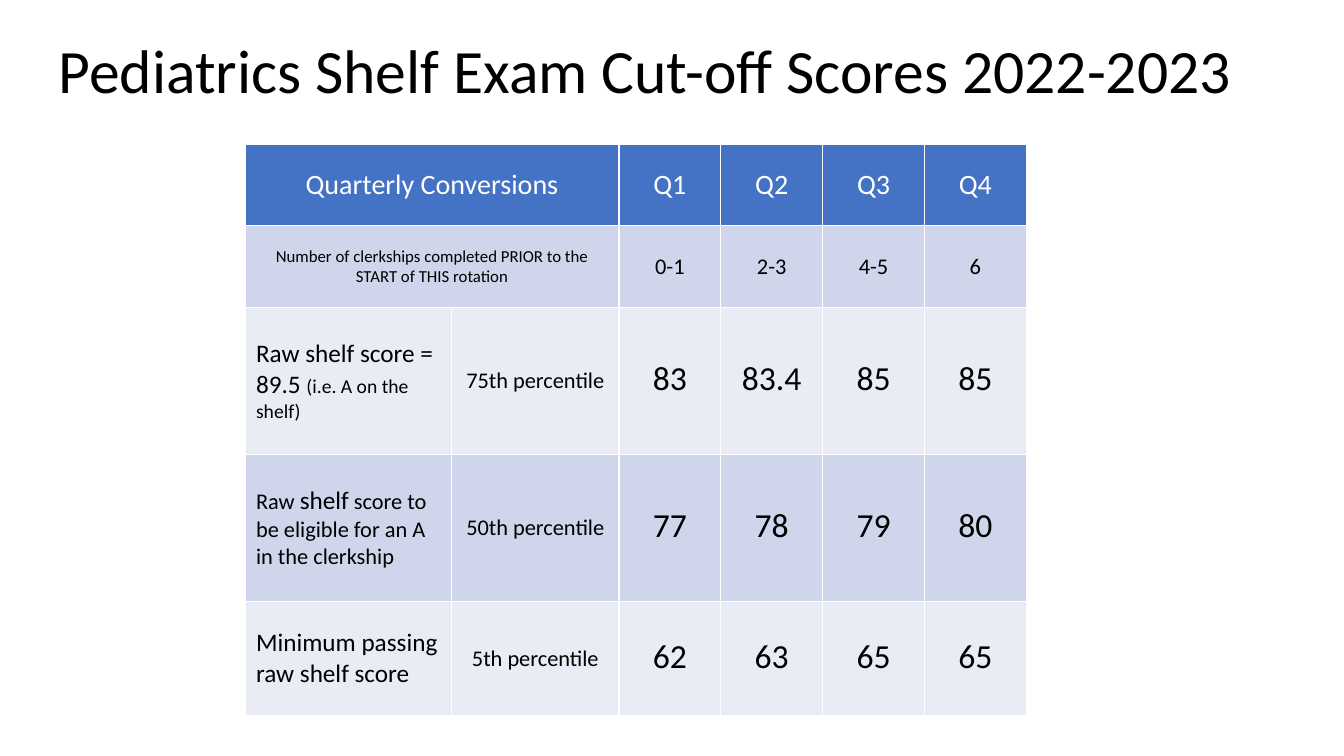
from lxml.etree import SubElement
from pptx import Presentation
from pptx.dml.color import RGBColor
from pptx.enum.text import MSO_ANCHOR, PP_ALIGN
from pptx.oxml.ns import qn
from pptx.util import Inches, Pt

FONT = "Calibri"
BLACK, WHITE = "000000", "FFFFFF"
HEADER, BAND_DARK, BAND_LIGHT = "4472C4", "CFD5EA", "E9EBF5"
COLS = [2.05, 1.66] + [1.01] * 4
ROWS = [0.81, 0.81, 1.46, 1.46, 1.13]
TEXT_INSETS = (0.11, 0.06, 0.11, 0.06)
SCORE_INSETS = (0.01, 0.01, 0.01, 0.05)

HEADINGS = [
    ("Quarterly Conversions", 20, ["Q1", "Q2", "Q3", "Q4"], 20),
    ("Number of clerkships completed PRIOR to the START of THIS rotation", 12,
     ["0-1", "2-3", "4-5", "6"], 16),
]
SCORES = [
    ([("Raw shelf score = 89.5 ", 18), ("(i.e. A on the shelf)", 14)],
     "75th percentile", ["83", "83.4", "85", "85"]),
    ([("Raw ", 16), ("shelf", 18),
      (" score to be eligible for an A in the clerkship", 16)],
     "50th percentile", ["77", "78", "79", "80"]),
    ([("Minimum passing raw shelf score", 18)],
     "5th percentile", ["62", "63", "65", "65"]),
]


def rgb(value):
    return RGBColor.from_string(value)


def style_run(r, size, color):
    r.font.name = FONT
    r.font.size = Pt(size)
    r.font.bold = False
    r.font.color.rgb = rgb(color)


def add_borders(cell, color=WHITE, width=1):
    tcPr = cell._tc.get_or_add_tcPr()
    for i, side in enumerate(("lnL", "lnR", "lnT", "lnB")):
        ln = SubElement(tcPr, qn(f"a:{side}"), w=str(Pt(width)))
        SubElement(SubElement(ln, qn("a:solidFill")), qn("a:srgbClr"), val=color)
        tcPr.insert(i, ln)


def style_cell(cell, fill):
    cell.fill.solid()
    cell.fill.fore_color.rgb = rgb(fill)
    add_borders(cell)


def fill_cell(cell, parts, color=BLACK, align=PP_ALIGN.CENTER, insets=TEXT_INSETS):
    cell.vertical_anchor = MSO_ANCHOR.MIDDLE
    (cell.margin_left, cell.margin_top,
     cell.margin_right, cell.margin_bottom) = map(Inches, insets)
    p = cell.text_frame.paragraphs[0]
    p.alignment = align
    for text, size in parts:
        r = p.add_run()
        r.text = text
        style_run(r, size, color)


def add_title(s, x, y, w, h):
    title = s.shapes.title
    title.left, title.top, title.width, title.height = map(Inches, (x, y, w, h))
    tf = title.text_frame
    tf.text = "Pediatrics Shelf Exam Cut-off Scores 2022-2023"
    tf.word_wrap = True
    tf.vertical_anchor = MSO_ANCHOR.MIDDLE
    p = tf.paragraphs[0]
    p.alignment = PP_ALIGN.LEFT
    p.line_spacing = 0.9
    style_run(p.runs[0], 44, BLACK)


def add_score_table(s, x, y):
    frame = s.shapes.add_table(len(ROWS), len(COLS), Inches(x), Inches(y),
                               Inches(sum(COLS)), Inches(sum(ROWS)))
    table = frame.table
    for col, width in zip(table.columns, COLS):
        col.width = Inches(width)
    for i, (row, height) in enumerate(zip(table.rows, ROWS)):
        row.height = Inches(height)
        fill = HEADER if i == 0 else (BAND_LIGHT, BAND_DARK)[i % 2]
        for cell in row.cells:
            style_cell(cell, fill)

    for i, (label, label_size, values, size) in enumerate(HEADINGS):
        color = WHITE if i == 0 else BLACK
        table.cell(i, 0).merge(table.cell(i, 1))
        fill_cell(table.cell(i, 0), [(label, label_size)], color)
        for j, value in enumerate(values, 2):
            fill_cell(table.cell(i, j), [(value, size)], color)

    for i, (label, percentile, values) in enumerate(SCORES, len(HEADINGS)):
        fill_cell(table.cell(i, 0), label, align=PP_ALIGN.LEFT)
        fill_cell(table.cell(i, 1), [(percentile, 16)])
        for j, value in enumerate(values, 2):
            fill_cell(table.cell(i, j), [(value, 24)], insets=SCORE_INSETS)


def main():
    prs = Presentation()
    prs.slide_width, prs.slide_height = Inches(13.33), Inches(7.5)
    s = prs.slides.add_slide(prs.slide_layouts[5])
    add_title(s, 0.48, 0, 11.94, 1.45)
    add_score_table(s, 2.43, 1.43)
    prs.save("out.pptx")


if __name__ == "__main__":
    main()
